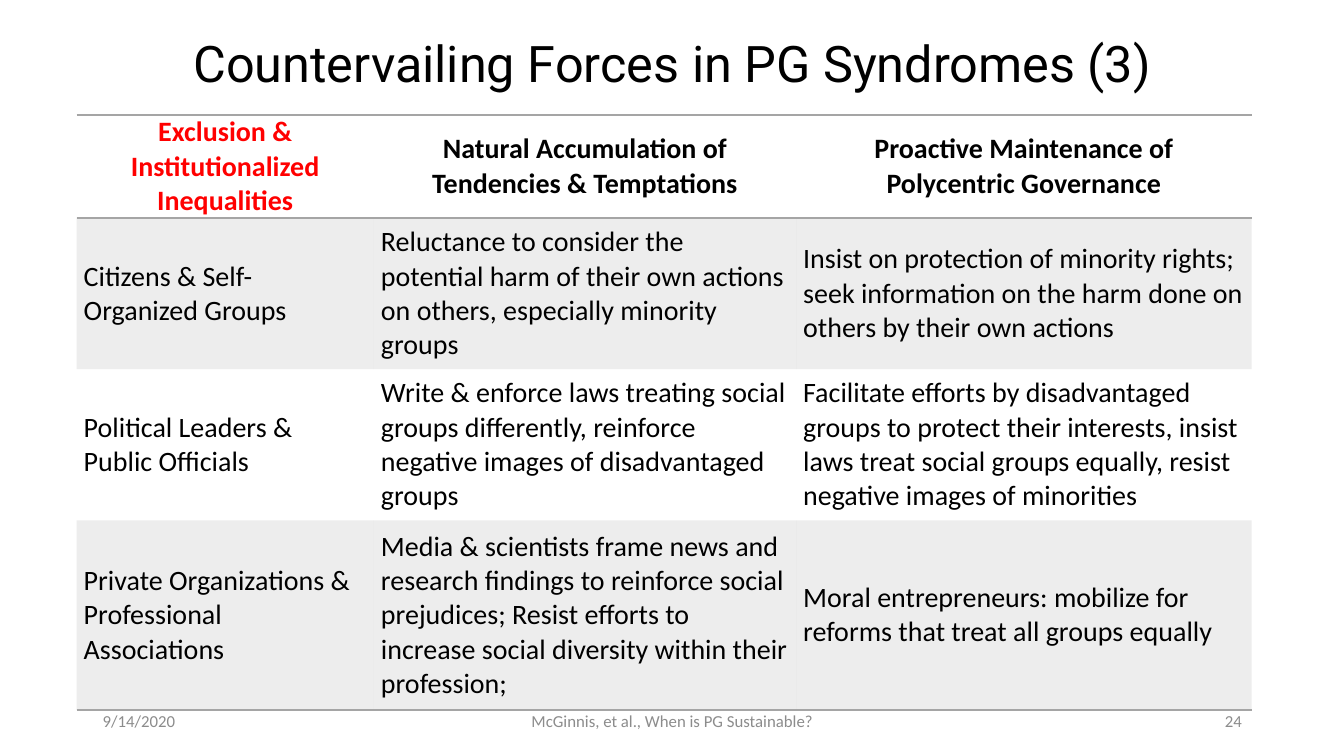
from lxml import etree
from pptx import Presentation
from pptx import util as u
from pptx.dml.color import RGBColor
from pptx.enum import text
from pptx.oxml.ns import qn

COLOURS = {"black": "000000", "red": "FF0000", "grey": "A5A5A5", "footer": "8C8C8C"}
NO_STYLE = "{2D5ABB26-0587-4C30-8999-92F81FD0307C}"
LEFT, CENTER, RIGHT = text.PP_ALIGN.LEFT, text.PP_ALIGN.CENTER, text.PP_ALIGN.RIGHT
MIDDLE = text.MSO_ANCHOR.MIDDLE

TITLE = "Countervailing Forces in PG Syndromes (3)"
ROWS = [
    ["Exclusion & Institutionalized Inequalities",
     "Natural Accumulation of Tendencies & Temptations",
     "Proactive Maintenance of\nPolycentric Governance"],
    ["Citizens & Self-Organized Groups",
     "Reluctance to consider the potential harm of their own actions on others, "
     "especially minority groups",
     "Insist on protection of minority rights; seek information on the harm done on "
     "others by their own actions"],
    ["Political Leaders & Public Officials",
     "Write & enforce laws treating social groups differently, reinforce negative "
     "images of disadvantaged groups",
     "Facilitate efforts by disadvantaged groups to protect their interests, insist "
     "laws treat social groups equally, resist negative images of minorities"],
    ["Private Organizations & Professional Associations",
     "Media & scientists frame news and research findings to reinforce social "
     "prejudices; Resist efforts to increase social diversity within their profession;",
     "Moral entrepreneurs: mobilize for reforms that treat all groups equally"],
]


class SlideBuilder:
    def __init__(self, page, font="Calibri"):
        self.page = page
        self.font = font

    def format(self, frame, size, colour, align, bold=False, font=None):
        frame.vertical_anchor = MIDDLE
        frame.word_wrap = True
        for para in frame.paragraphs:
            para.alignment = align
            para.font.name = font or self.font
            para.font.size = u.Pt(size)
            para.font.bold = bold
            para.font.color.rgb = RGBColor.from_string(COLOURS[colour])

    def title(self, words, left, top, width, height):
        box = self.page.shapes.title
        box.left, box.top, box.width, box.height = map(u.Cm, (left, top, width, height))
        frame = box.text_frame
        frame.text = words
        frame.auto_size = text.MSO_AUTO_SIZE.NONE
        self.format(frame, 36, "black", CENTER, font="Roboto")
        frame.paragraphs[0].line_spacing = 0.9

    def footer(self, words, left, width, align):
        box = self.page.shapes.add_textbox(*map(u.Cm, (left, 17.65, width, 1.02)))
        box.text_frame.text = words
        self.format(box.text_frame, 12, "footer", align)

    def shade(self, cell):
        cell.fill.solid()
        cell.fill.fore_color.rgb = RGBColor.from_string(COLOURS["grey"])
        colour = next(cell._tc.tcPr.iter(qn("a:srgbClr")))
        etree.SubElement(colour, qn("a:alpha"), val="20000")

    def rule(self, cell, sides):
        # Borders come before the fill in the cell properties
        for place, side in enumerate(sides):
            line = etree.Element(qn(f"a:ln{side}"), w=str(u.Pt(1)))
            fill = etree.SubElement(line, qn("a:solidFill"))
            etree.SubElement(fill, qn("a:srgbClr"), val=COLOURS["grey"])
            cell._tc.get_or_add_tcPr().insert(place, line)

    def table(self, rows, left, top, widths, heights):
        holder = self.page.shapes.add_table(
            len(rows), len(widths),
            *map(u.Cm, (left, top, sum(widths), sum(heights))))
        next(holder.element.iter(qn("a:tableStyleId"))).text = NO_STYLE
        grid = holder.table
        grid.first_row = grid.horz_banding = False
        for column, width in zip(grid.columns, widths):
            column.width = u.Cm(width)
        for r, (words, height) in enumerate(zip(rows, heights)):
            grid.rows[r].height = u.Cm(height)
            for c, value in enumerate(words):
                self.cell(grid.cell(r, c), value, r, c, last=r == len(rows) - 1)

    def cell(self, cell, value, r, c, last):
        header = r == 0
        cell.text = value
        cell.margin_left = cell.margin_right = u.Cm(0.18)
        cell.margin_top = cell.margin_bottom = 0
        cell.vertical_anchor = MIDDLE
        self.format(cell.text_frame, 20, "red" if header and c == 0 else "black",
                    CENTER if header else LEFT, bold=header)
        if r % 2:
            self.shade(cell)
        else:
            cell.fill.background()
        if header or last:
            self.rule(cell, "TB" if header else "B")


def main():
    deck = Presentation()
    deck.slide_width, deck.slide_height = u.Cm(33.87), u.Cm(19.05)
    slide = SlideBuilder(deck.slides.add_slide(deck.slide_layouts[5]))

    # Heading
    slide.title(TITLE, 2.34, 1.02, 29.21, 1.32)

    # Forces by group
    slide.table(ROWS, 1.93, 2.9, [7.49, 10.64, 11.48], [2.59, 3.81, 3.81, 4.78])

    # Footer line
    slide.footer("9/14/2020", 2.34, 7.62, LEFT)
    slide.footer("McGinnis, et al., When is PG Sustainable?", 11.23, 11.43, CENTER)
    slide.footer("24", 23.93, 7.62, RIGHT)

    deck.save("out.pptx")


if __name__ == "__main__":
    main()
